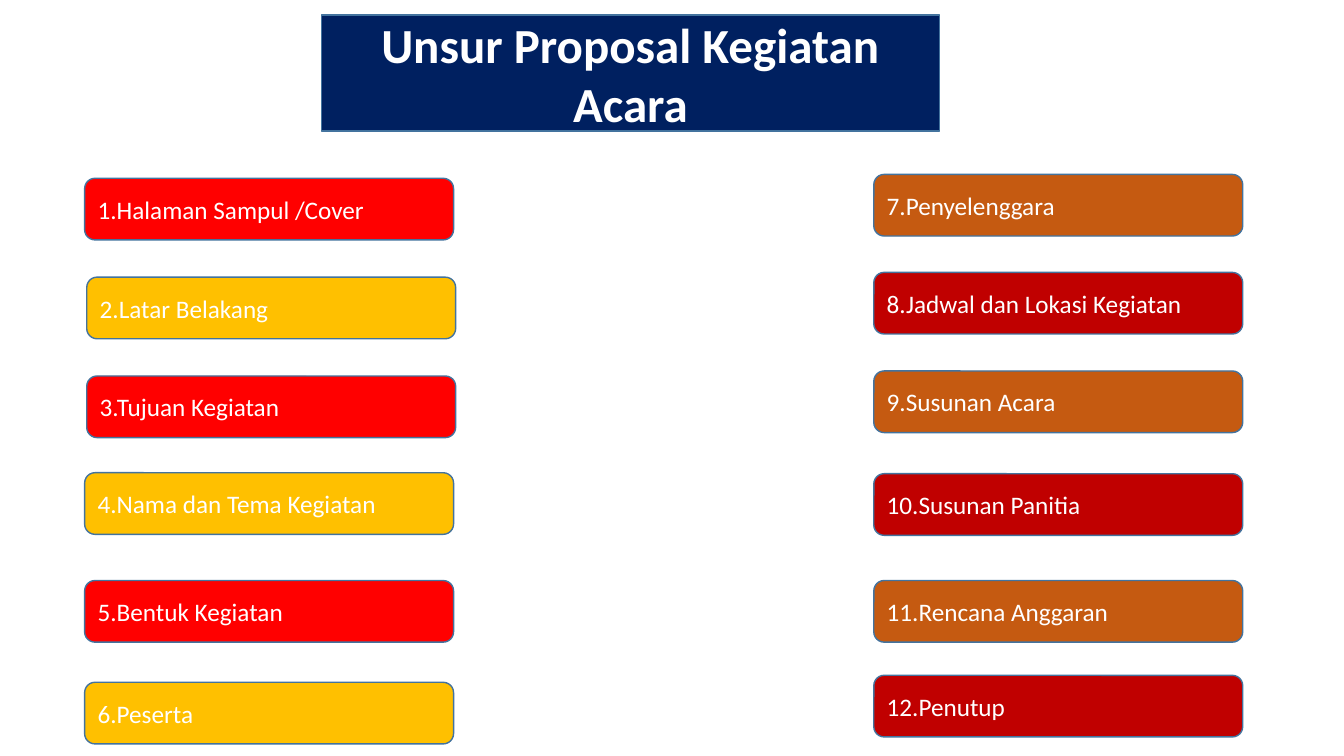
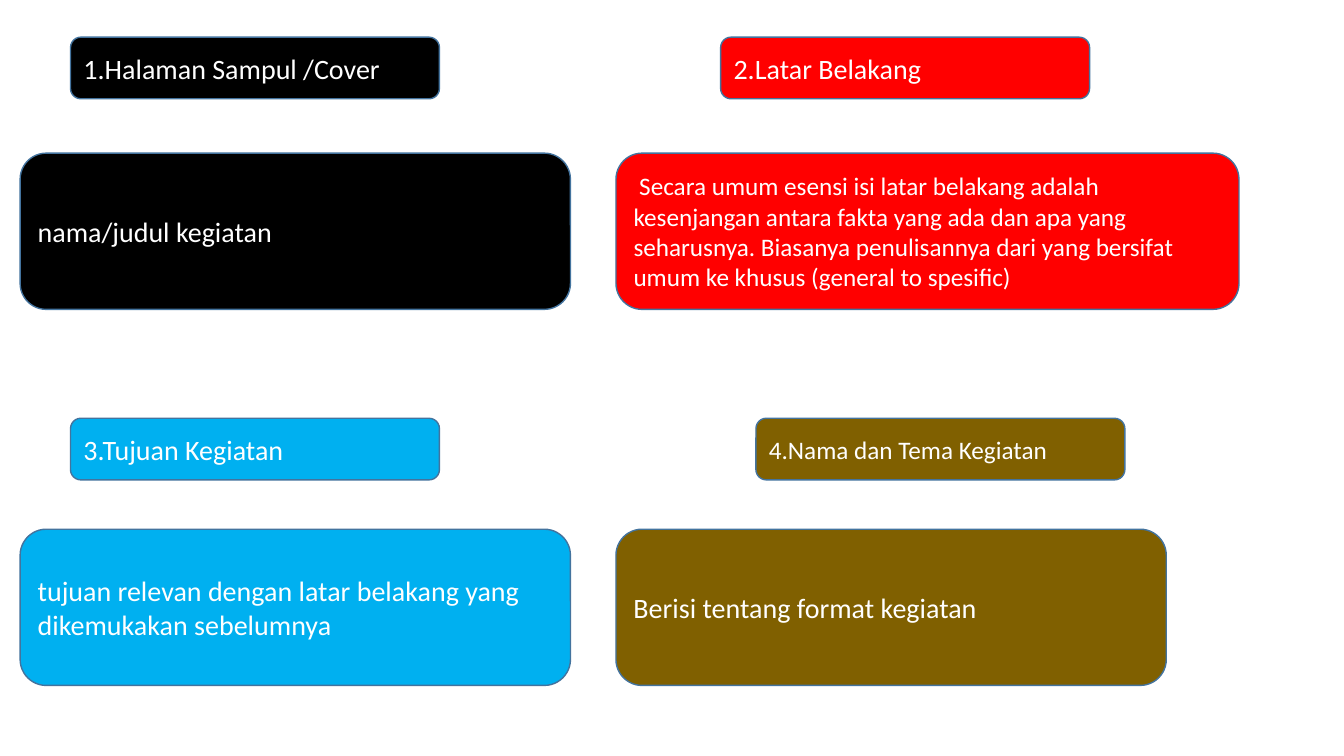
import pptx
import pptx.util
import pptx.dml.color
import pptx.enum.shapes
import pptx.enum.text

Pt = pptx.util.Pt
SHAPES = pptx.enum.shapes.MSO_SHAPE
ALIGN = pptx.enum.text.PP_ALIGN
MIDDLE = pptx.enum.text.MSO_ANCHOR.MIDDLE

COLOURS = {
    "white": "FFFFFF",
    "outline": "43739E",
    "navy": "002060",
    "red": "FF0000",
    "amber": "FFC000",
    "rust": "C55A11",
    "crimson": "C00000",
    "black": "000000",
    "sky": "00B0F0",
    "olive": "806000",
}


def colour(name):
    return pptx.dml.color.RGBColor.from_string(COLOURS[name])


class Deck:
    label_size = (263.5, 44)
    panel_height = 111.6

    def __init__(self):
        self.presentation = pptx.Presentation()
        self.presentation.slide_width = Pt(960)
        self.presentation.slide_height = Pt(540)
        self.slide = None

    def add_slide(self):
        layout = self.presentation.slide_layouts[6]
        self.slide = self.presentation.slides.add_slide(layout)

    def box(self, kind, bounds, fill, text, size, align=ALIGN.LEFT, bold=False):
        shape = self.slide.shapes.add_shape(kind, *map(Pt, bounds))
        shape.shadow.inherit = False
        shape.fill.solid()
        shape.fill.fore_color.rgb = colour(fill)
        shape.line.color.rgb = colour("outline")
        shape.line.width = Pt(1)
        frame = shape.text_frame
        frame.word_wrap = True
        frame.vertical_anchor = MIDDLE
        paragraph = frame.paragraphs[0]
        paragraph.alignment = align
        run = paragraph.add_run()
        run.text = text
        run.font.color.rgb = colour("white")
        formats = {"name": "Calibri", "size": Pt(size), "bold": bold}
        for attribute, value in formats.items():
            setattr(run.font, attribute, value)

    def title(self, text):
        self.box(SHAPES.RECTANGLE, (229.7, 10.8, 441.4, 82.8), "navy", text, 35,
                 ALIGN.CENTER, True)

    def label(self, left, top, fill, text, size=18):
        self.box(SHAPES.ROUNDED_RECTANGLE, (left, top, *self.label_size),
                 fill, text, size)

    def panel(self, left, top, width, fill, text, size=20):
        self.box(SHAPES.ROUNDED_RECTANGLE, (left, top, width, self.panel_height),
                 fill, text, size)


def build_elements(deck):
    deck.add_slide()
    deck.title("Unsur Proposal Kegiatan Acara")
    columns = [
        (("red", "amber"), 1, [
            (60.5, 127.4, "Halaman Sampul /Cover"),
            (62, 198, "Latar Belakang"),
            (62, 268.6, "Tujuan Kegiatan"),
            (60.5, 337.7, "Nama dan Tema Kegiatan"),
            (60.5, 414.7, "Bentuk Kegiatan"),
            (60.5, 487.4, "Peserta"),
        ]),
        (("rust", "crimson"), 7, [
            (624.2, 124.6, "Penyelenggara"),
            (624.2, 194.6, "Jadwal dan Lokasi Kegiatan"),
            (624.2, 265, "Susunan Acara"),
            (624.2, 338.4, "Susunan Panitia"),
            (624.2, 414.7, "Rencana Anggaran"),
            (624.2, 482.4, "Penutup"),
        ]),
    ]
    for fills, first, items in columns:
        for index, (left, top, name) in enumerate(items):
            deck.label(left, top, fills[index % 2], f"{first + index}.{name}")


def build_explanations(deck):
    deck.add_slide()
    label_tops = (26.6, 298.8)
    panel_tops = (109.4, 378)
    panel_lefts = (14.4, 440)
    topics = [
        ("black", 50.4, "Halaman Sampul /Cover", 20, 393.1,
         "nama/judul kegiatan", 20),
        ("red", 514.8, "Latar Belakang", 20, 445,
         " Secara umum esensi isi latar belakang adalah kesenjangan antara "
         "fakta yang ada dan apa yang seharusnya. Biasanya penulisannya dari "
         "yang bersifat umum ke khusus (general to spesific)", 18),
        ("sky", 50.4, "Tujuan Kegiatan", 20, 393.1,
         "tujuan relevan dengan latar belakang yang dikemukakan sebelumnya", 20),
        ("olive", 540, "Nama dan Tema Kegiatan", 18, 393.1,
         "Berisi tentang format kegiatan", 20),
    ]
    for index, topic in enumerate(topics):
        fill, label_left, name, label_font, panel_width, text, panel_font = topic
        row, column = divmod(index, 2)
        deck.label(label_left, label_tops[row], fill, f"{index + 1}.{name}",
                   label_font)
        deck.panel(panel_lefts[column], panel_tops[row], panel_width, fill, text,
                   panel_font)


def main():
    deck = Deck()
    build_elements(deck)
    build_explanations(deck)
    deck.presentation.save("out.pptx")


if __name__ == "__main__":
    main()
